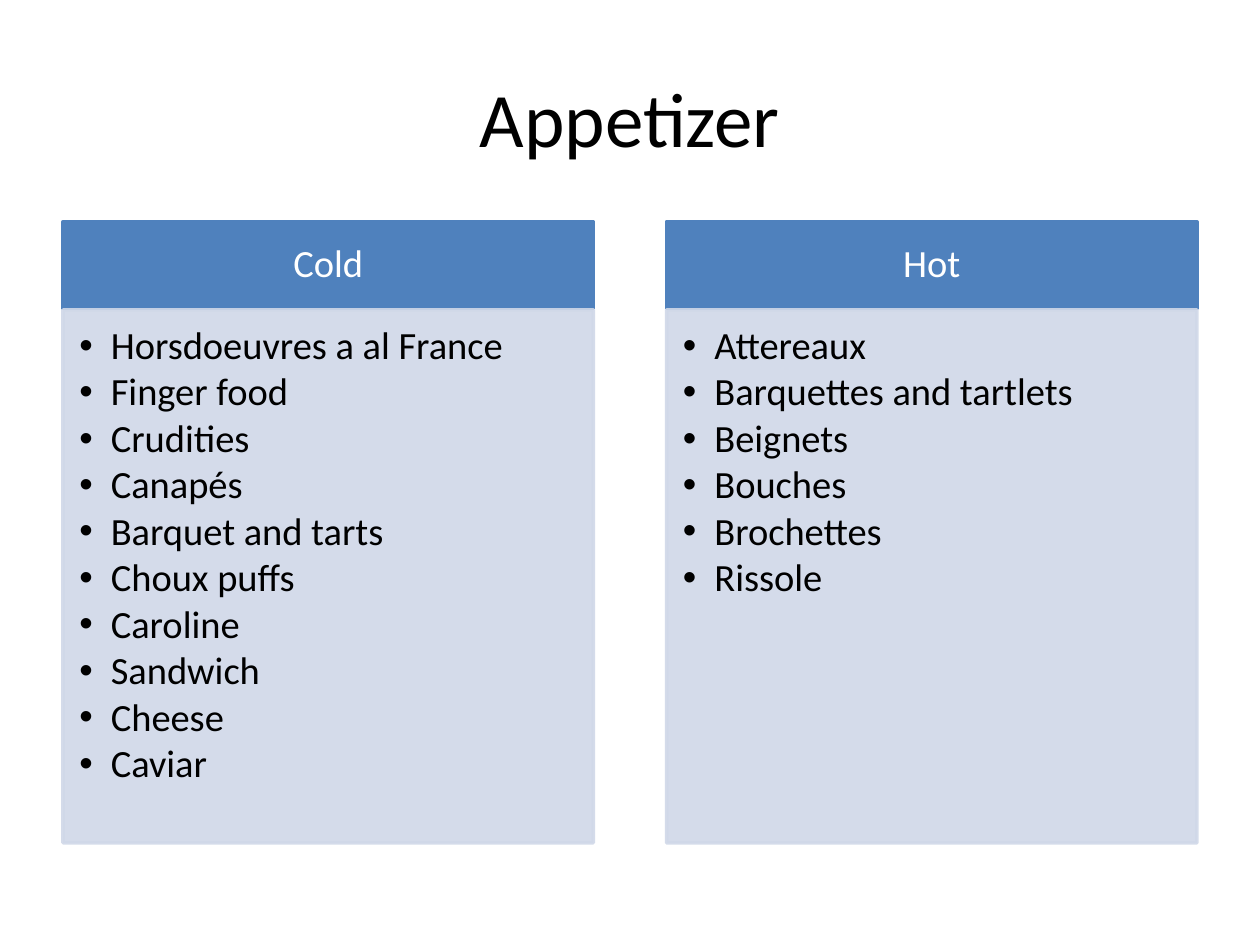
"""Build a slide that lists cold and hot appetizers in two columns."""
import pptx
import pptx.dml.color
import pptx.enum.shapes
import pptx.enum.text
import pptx.oxml.ns
import pptx.util
from lxml import etree

Inches = pptx.util.Inches
Pt = pptx.util.Pt
ALIGN = pptx.enum.text.PP_ALIGN
ANCHOR = pptx.enum.text.MSO_ANCHOR
COLORS = {"head": "4F81BD", "body": "D0D8E8", "light": "FFFFFF", "dark": "000000"}
FONT = "Calibri"
LEFT, WIDTH, STEP = 0.5, 4.21, 4.79
MENU = {
    "Cold": ["Horsdoeuvres a al France", "Finger food", "Crudities", "Canapés",
             "Barquet and tarts", "Choux puffs", "Caroline", "Sandwich",
             "Cheese", "Caviar"],
    "Hot": ["Attereaux", "Barquettes and tartlets", "Beignets", "Bouches",
            "Brochettes", "Rissole"],
}


def color(name):
    return pptx.dml.color.RGBColor.from_string(COLORS[name])


def write(shape, text, size, ink, align, anchor, insets):
    frame = shape.text_frame
    frame.text = text
    frame.word_wrap = True
    frame.vertical_anchor = anchor
    (frame.margin_left, frame.margin_top,
     frame.margin_right, frame.margin_bottom) = map(Inches, insets)
    for par in frame.paragraphs:
        par.alignment = align
        for run in par.runs:
            run.font.size = Pt(size)
            run.font.name = FONT
            run.font.color.rgb = color(ink)
    return frame.paragraphs


def add_title(slide, text):
    box = slide.shapes.add_textbox(Inches(0.5), Inches(0.3), Inches(9), Inches(1.25))
    write(box, text, 44, "dark", ALIGN.CENTER, ANCHOR.MIDDLE, (0.1, 0.05, 0.1, 0.05))


def add_panel(slide, left, top, height, tint):
    panel = slide.shapes.add_shape(
        pptx.enum.shapes.MSO_SHAPE.RECTANGLE,
        Inches(left), Inches(top), Inches(WIDTH), Inches(height))
    panel.shadow.inherit = False
    panel.fill.solid()
    panel.fill.fore_color.rgb = color(tint)
    panel.line.color.rgb = color(tint)
    panel.line.width = Pt(2)
    return panel


def fade(shape, percent):
    qn = pptx.oxml.ns.qn
    for node in shape.element.spPr.iter(qn("a:srgbClr")):
        etree.SubElement(node, qn("a:alpha")).set("val", str(percent * 1000))


def add_bullet(par):
    qn = pptx.oxml.ns.qn
    props = par._p.get_or_add_pPr()
    props.set("marL", str(Inches(0.25)))
    props.set("indent", str(Inches(-0.25)))
    etree.SubElement(props, qn("a:buFont")).set("typeface", "Arial")
    etree.SubElement(props, qn("a:buChar")).set("char", "•")


def add_column(slide, left, name, items):
    head = add_panel(slide, left, 1.76, 0.69, "head")
    write(head, name, 22, "light", ALIGN.CENTER, ANCHOR.MIDDLE,
          (0.17, 0.1, 0.17, 0.1))[0].line_spacing = 0.9
    body = add_panel(slide, left, 2.46, 4.23, "body")
    fade(body, 90)
    for par in write(body, "\n".join(items), 22, "dark", ALIGN.LEFT, ANCHOR.TOP,
                     (0.13, 0.13, 0.17, 0.19)):
        par.level = 1
        par.line_spacing = 0.9
        par.space_after = Pt(2.8)
        add_bullet(par)


def main():
    deck = pptx.Presentation()
    deck.slide_width, deck.slide_height = Inches(10), Inches(7.5)
    slide = deck.slides.add_slide(deck.slide_layouts[6])
    add_title(slide, "Appetizer")
    for col, (name, items) in enumerate(MENU.items()):
        add_column(slide, LEFT + col * STEP, name, items)
    deck.save("out.pptx")


if __name__ == "__main__":
    main()
